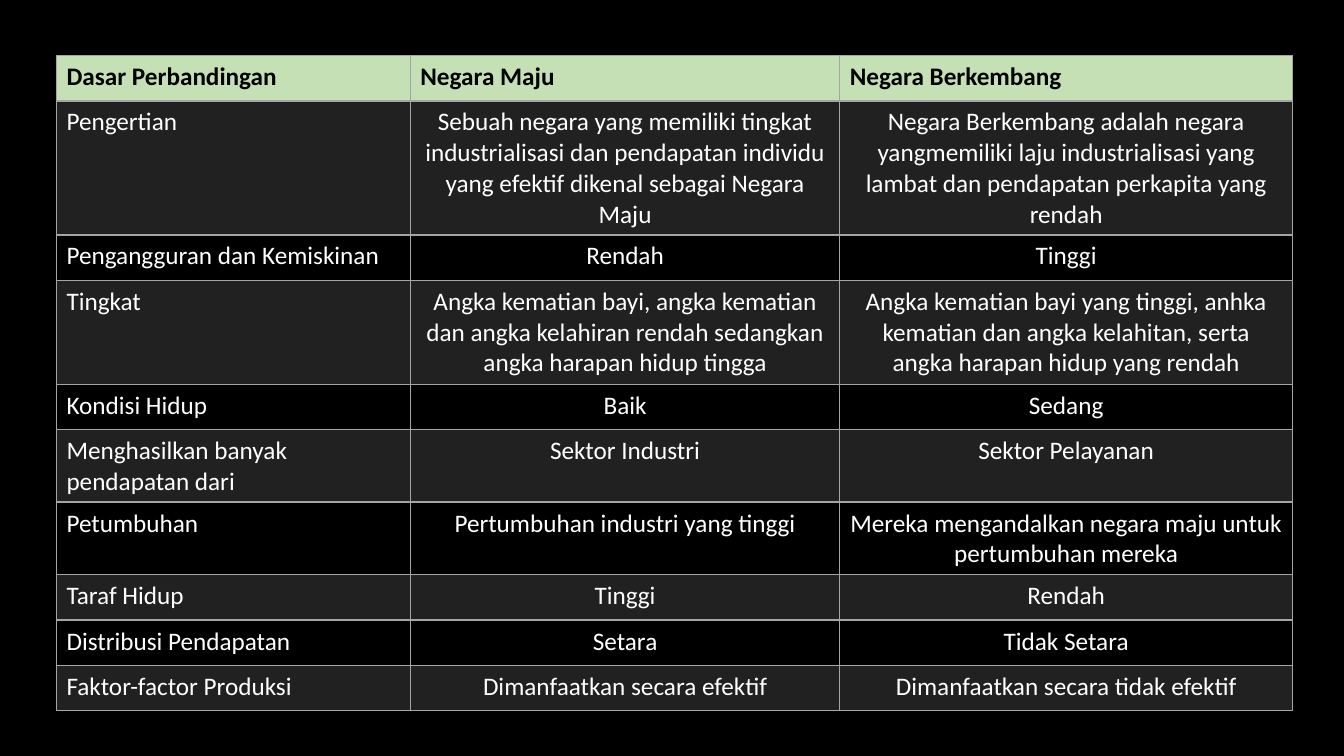
import pptx
import pptx.dml.color
import pptx.enum.text
import pptx.oxml
import pptx.oxml.ns
import pptx.util

Inches = pptx.util.Inches
Pt = pptx.util.Pt

COMPARISON = [
    ("Dasar Perbandingan", "Negara Maju", "Negara Berkembang"),
    ("Pengertian",
     "Sebuah negara yang memiliki tingkat industrialisasi dan pendapatan individu yang efektif dikenal sebagai Negara Maju",
     "Negara Berkembang adalah negara yangmemiliki laju industrialisasi yang lambat dan pendapatan perkapita yang rendah"),
    ("Pengangguran dan Kemiskinan", "Rendah", "Tinggi"),
    ("Tingkat",
     "Angka kematian bayi, angka kematian dan angka kelahiran rendah sedangkan angka harapan hidup tingga",
     "Angka kematian bayi yang tinggi, anhka kematian dan angka kelahitan, serta angka harapan hidup yang rendah"),
    ("Kondisi Hidup", "Baik", "Sedang"),
    ("Menghasilkan banyak pendapatan dari", "Sektor Industri", "Sektor Pelayanan"),
    ("Petumbuhan", "Pertumbuhan industri yang tinggi",
     "Mereka mengandalkan negara maju untuk pertumbuhan mereka"),
    ("Taraf Hidup", "Tinggi", "Rendah"),
    ("Distribusi Pendapatan", "Setara", "Tidak Setara"),
    ("Faktor-factor Produksi", "Dimanfaatkan secara efektif", "Dimanfaatkan secara tidak efektif"),
]
COLUMN_WIDTHS = [3.51, 4.26, 4.49]
ROW_HEIGHTS = [0.45, 1.32, 0.45, 1.03, 0.45, 0.72, 0.72, 0.45, 0.45, 0.45]
LEFT, TOP = 0.56, 0.55
GRID, HEADER_FILL, BLACK, WHITE = "A5A5A5", "C5E0B4", "000000", "FFFFFF"
BAND_ALPHA = 20


def paint(fill, color, alpha=100):
    fill.solid()
    fill.fore_color.rgb = pptx.dml.color.RGBColor.from_string(color)
    if alpha < 100:
        srgb = fill._xPr.find(".//" + pptx.oxml.ns.qn("a:srgbClr"))
        srgb.append(pptx.oxml.parse_xml(
            f'<a:alpha {pptx.oxml.ns.nsdecls("a")} val="{alpha * 1000}"/>'))


def draw_borders(cell, row):
    widths = {"L": 1, "R": 1, "T": 2 if row == 1 else 1, "B": 2 if row == 0 else 1}
    properties = cell._tc.get_or_add_tcPr()
    for position, (side, width) in enumerate(widths.items()):
        properties.insert(position, pptx.oxml.parse_xml(
            f'<a:ln{side} {pptx.oxml.ns.nsdecls("a")} w="{Pt(width)}">'
            f'<a:solidFill><a:srgbClr val="{GRID}"/></a:solidFill></a:ln{side}>'))


def write_cell(cell, text, row, column):
    header = row == 0
    cell.text = text
    cell.margin_left = cell.margin_right = Inches(0.1)
    cell.margin_top, cell.margin_bottom = Inches(0.06), Inches(0.05)
    if header:
        paint(cell.fill, HEADER_FILL)
    elif row % 2:
        paint(cell.fill, GRID, BAND_ALPHA)
    else:
        cell.fill.background()
    draw_borders(cell, row)
    paragraph = cell.text_frame.paragraphs[0]
    if column and not header:
        paragraph.alignment = pptx.enum.text.PP_ALIGN.CENTER
    font = paragraph.font
    font.name, font.size, font.bold = "Calibri", Pt(18), header
    paint(font.fill, BLACK if header else WHITE)


def main():
    presentation = pptx.Presentation()
    presentation.slide_width, presentation.slide_height = Inches(13.33), Inches(7.5)
    slide = presentation.slides.add_slide(presentation.slide_layouts[6])
    paint(slide.background.fill, BLACK)
    comparison = slide.shapes.add_table(
        len(ROW_HEIGHTS), len(COLUMN_WIDTHS), Inches(LEFT), Inches(TOP),
        Inches(sum(COLUMN_WIDTHS)), Inches(sum(ROW_HEIGHTS))).table
    comparison.horz_banding = False
    for column, width in zip(comparison.columns, COLUMN_WIDTHS):
        column.width = Inches(width)
    for row, (texts, height) in enumerate(zip(COMPARISON, ROW_HEIGHTS)):
        comparison.rows[row].height = Inches(height)
        for column, text in enumerate(texts):
            write_cell(comparison.cell(row, column), text, row, column)
    presentation.save("out.pptx")


if __name__ == "__main__":
    main()
